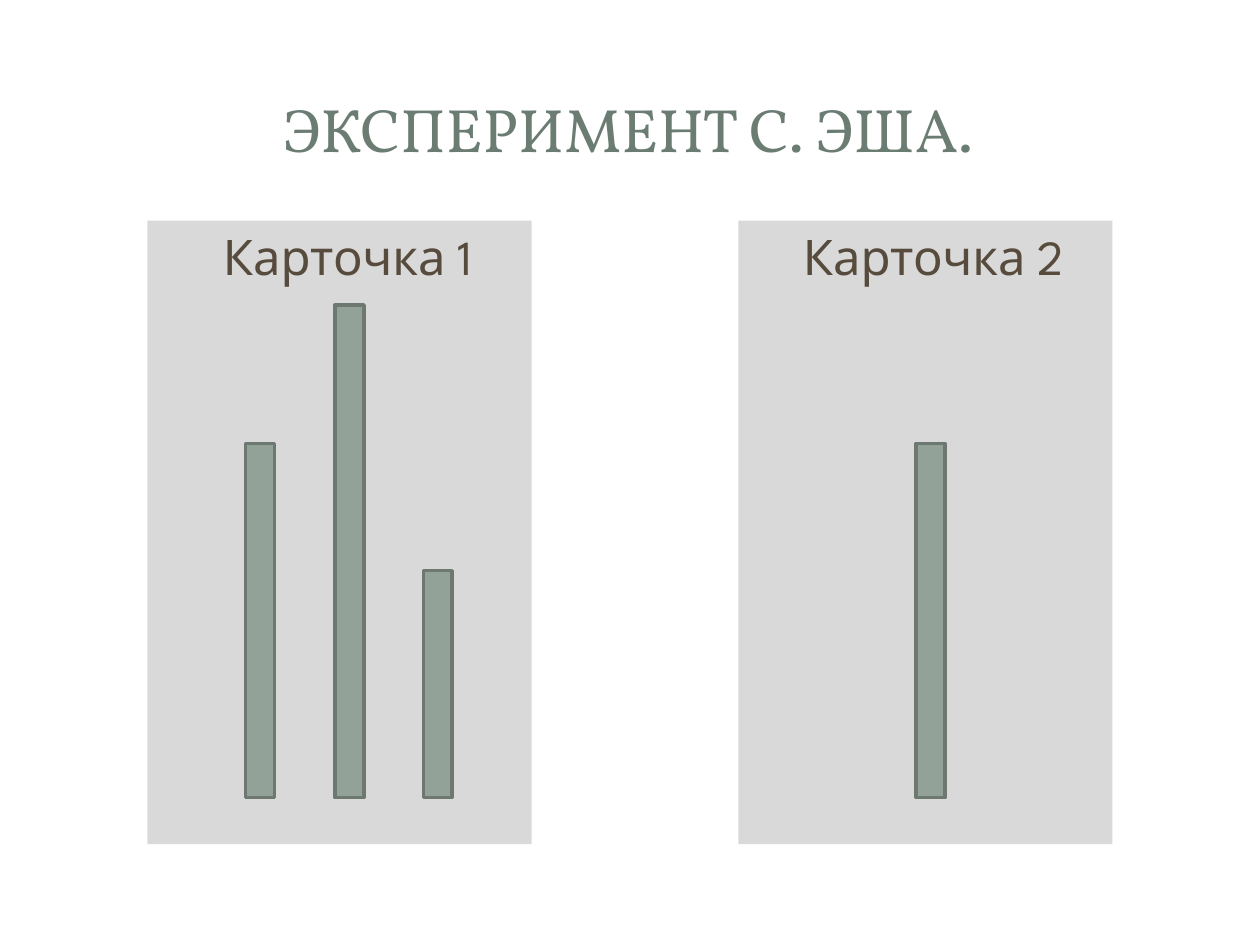
from pptx import Presentation
from pptx.dml.color import RGBColor
from pptx.enum.shapes import MSO_SHAPE
from pptx.enum.text import MSO_ANCHOR, PP_ALIGN
from pptx.util import Inches, Pt

RECTANGLE = MSO_SHAPE.RECTANGLE
CENTER = PP_ALIGN.CENTER
TOP, MIDDLE = MSO_ANCHOR.TOP, MSO_ANCHOR.MIDDLE

TITLE_GREEN = RGBColor(0x6B, 0x7D, 0x72)
CARD_GRAY = RGBColor(0xD9, 0xD9, 0xD9)
LABEL_BROWN = RGBColor(0x56, 0x4B, 0x3C)
BAR_GREEN = RGBColor(0x93, 0xA2, 0x99)
BAR_EDGE = RGBColor(0x6D, 0x78, 0x71)

TITLE = "ЭКСПЕРИМЕНТ С. ЭША."
TITLE_BOX = (0.47, 0.45, 9.03, 1.14)
TITLE_FONT = {"name": "Vollkorn", "size": Pt(35)}
LABEL_FONT = {"name": "League Spartan", "size": Pt(28)}

# Each bar is (left, height); all bars stand on one baseline.
CARDS = [
    {"label": "Карточка 1", "left": 1.17, "width": 3.05,
     "bars": [(1.95, 2.81), (2.66, 3.91), (3.36, 1.8)]},
    {"label": "Карточка 2", "left": 5.86, "width": 2.97,
     "bars": [(7.27, 2.81)]},
]
CARD_TOP, CARD_HEIGHT = 1.75, 4.95
BAR_WIDTH, BASELINE = 0.23, 6.33
LABEL_MARGIN, LABEL_INDENT = 0.38, -0.25


def write_centered(shape, text, font_values, color, anchor):
    frame = shape.text_frame
    frame.word_wrap = True
    frame.vertical_anchor = anchor
    paragraph = frame.paragraphs[0]
    paragraph.alignment = CENTER
    run = paragraph.add_run()
    run.text = text
    for attribute, value in font_values.items():
        setattr(run.font, attribute, value)
    run.font.color.rgb = color
    return paragraph


def add_rectangle(slide, box, fill, edge=None):
    rectangle = slide.shapes.add_shape(RECTANGLE, *map(Inches, box))
    rectangle.shadow.inherit = False
    rectangle.fill.solid()
    rectangle.fill.fore_color.rgb = fill
    if edge is None:
        rectangle.line.fill.background()
    else:
        rectangle.line.color.rgb = edge
        rectangle.line.width = Pt(2)
    return rectangle


def add_card(slide, card):
    box = (card["left"], CARD_TOP, card["width"], CARD_HEIGHT)
    panel = add_rectangle(slide, box, CARD_GRAY)
    label = write_centered(panel, card["label"], LABEL_FONT, LABEL_BROWN, TOP)
    label.space_before = Pt(5.6)
    properties = label._p.get_or_add_pPr()
    properties.set("marL", str(Inches(LABEL_MARGIN)))
    properties.set("indent", str(Inches(LABEL_INDENT)))
    for left, height in card["bars"]:
        bar_box = (left, BASELINE - height, BAR_WIDTH, height)
        add_rectangle(slide, bar_box, BAR_GREEN, BAR_EDGE)


def main():
    presentation = Presentation()
    presentation.slide_width = Inches(10)
    presentation.slide_height = Inches(7.5)
    slide = presentation.slides.add_slide(presentation.slide_layouts[6])

    title = slide.shapes.add_textbox(*map(Inches, TITLE_BOX))
    write_centered(title, TITLE, TITLE_FONT, TITLE_GREEN, MIDDLE)
    for card in CARDS:
        add_card(slide, card)

    presentation.save("out.pptx")


if __name__ == "__main__":
    main()
